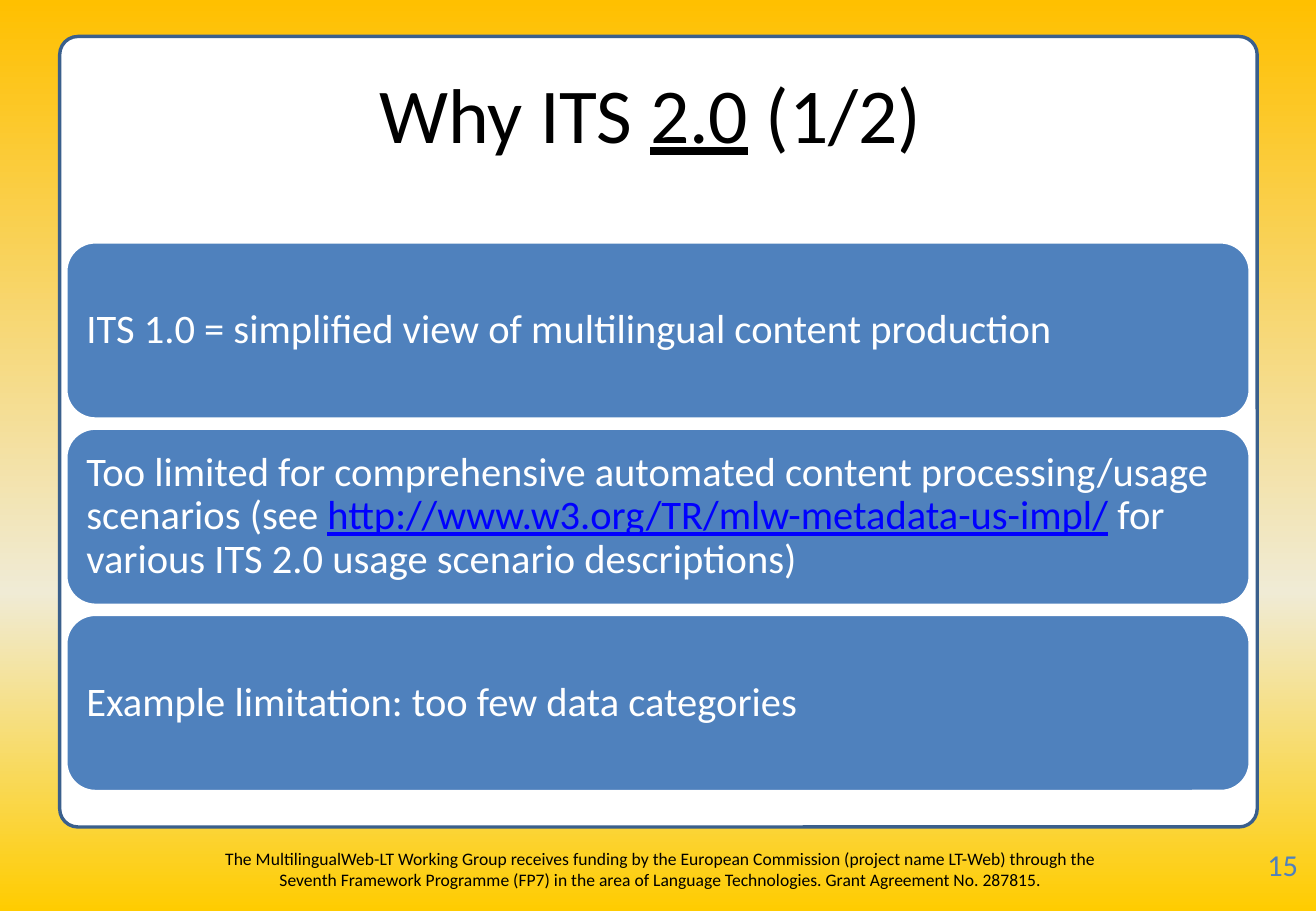
from lxml.etree import SubElement
from pptx import Presentation
from pptx.dml.color import RGBColor
from pptx.enum.shapes import MSO_SHAPE
from pptx.enum.text import MSO_ANCHOR, PP_ALIGN
from pptx.oxml.ns import qn
from pptx.util import Pt

PX = 7620
W, H = 1300, 900
FONT = "Calibri"
COLORS = {
    "black": "000000",
    "white": "FFFFFF",
    "bar": "4F81BD",
    "frame": "3A5F8C",
    "link": "0000FF",
}
SKY = [(0, "FFC000"), (65, "F0EBD5"), (100, "FFCC00")]
FOOTER = (
    "The MultilingualWeb-LT Working Group receives funding by the European "
    "Commission (project name LT-Web) through the Seventh Framework Programme "
    "(FP7) in the area of Language Technologies. Grant Agreement No. 287815."
)
TITLE = [("Why ITS ", "black", False), ("2.0", "black", True),
         (" (1/2) ", "black", False)]
BARS = [
    [("ITS 1.0 = simplified view of multilingual content production", "white", False)],
    [("Too limited for comprehensive automated content processing/usage "
      "scenarios (see ", "white", False),
     ("http://www.w3.org/TR/mlw-metadata-us-impl/", "link", True),
     (" for various ITS 2.0 usage scenario descriptions)", "white", False)],
    [("Example limitation: too few data categories", "white", False)],
]


def rgb(name):
    return RGBColor.from_string(COLORS[name])


def emu(*lengths):
    return [n * PX for n in lengths]


def write(sp, runs, size, align, anchor, inset_x=12, inset_y=6):
    tf = sp.text_frame
    tf.word_wrap = True
    tf.vertical_anchor = anchor
    tf.margin_left = tf.margin_right = inset_x * PX
    tf.margin_top = tf.margin_bottom = inset_y * PX
    p = tf.paragraphs[0]
    p.alignment = align
    for text, color, underline in runs:
        r = p.add_run()
        r.text = text
        r.font.name = FONT
        r.font.size = Pt(size)
        r.font.color.rgb = rgb(color)
        r.font.underline = underline
    return p


def add_round_rect(slide, box, fill, line):
    sp = slide.shapes.add_shape(MSO_SHAPE.ROUNDED_RECTANGLE, *emu(*box))
    sp.shadow.inherit = False
    sp.fill.solid()
    sp.fill.fore_color.rgb = rgb(fill)
    sp.line.color.rgb = rgb(line)
    sp.line.width = Pt(2)
    return sp


def add_background(slide):
    fill = slide.background.fill
    fill.gradient()
    fill.gradient_angle = 270
    stops = slide.element.find(".//" + qn("a:gsLst"))
    for gs in list(stops):
        stops.remove(gs)
    for pos, color in SKY:
        gs = SubElement(stops, qn("a:gs"), pos=str(pos * 1000))
        SubElement(gs, qn("a:srgbClr"), val=color)


def add_panel(slide, box):
    sp = add_round_rect(slide, box, "white", "frame")
    sp.adjustments[0] = 0.023


def add_title(slide, box):
    sp = slide.shapes.add_textbox(*emu(*box))
    write(sp, TITLE, 46, PP_ALIGN.CENTER, MSO_ANCHOR.MIDDLE)


def add_bars(slide, box, gap):
    x, y, w, h = box
    bar_h = (h - gap * (len(BARS) - 1)) // len(BARS)
    for i, runs in enumerate(BARS):
        sp = add_round_rect(slide, (x, y + i * (bar_h + gap), w, bar_h), "bar", "white")
        p = write(sp, runs, 24, PP_ALIGN.LEFT, MSO_ANCHOR.MIDDLE, inset_y=12)
        p.line_spacing = 0.9


def add_footer(slide, box, number_box):
    sp = slide.shapes.add_textbox(*emu(*box))
    write(sp, [(FOOTER, "black", False)], 10.4, PP_ALIGN.CENTER, MSO_ANCHOR.TOP)
    sp = slide.shapes.add_textbox(*emu(*number_box))
    write(sp, [("15", "bar", False)], 18, PP_ALIGN.LEFT, MSO_ANCHOR.TOP, 3, 1)


def main():
    prs = Presentation()
    prs.slide_width, prs.slide_height = emu(W, H)
    slide = prs.slides.add_slide(prs.slide_layouts[6])
    add_background(slide)
    add_panel(slide, (59, 36, 1183, 781))
    add_title(slide, (61, 36, 1180, 150))
    add_bars(slide, (65, 239, 1170, 543), 9)
    add_footer(slide, (194, 832, 917, 48), (1249, 835, 51, 48))
    prs.save("out.pptx")


if __name__ == "__main__":
    main()
